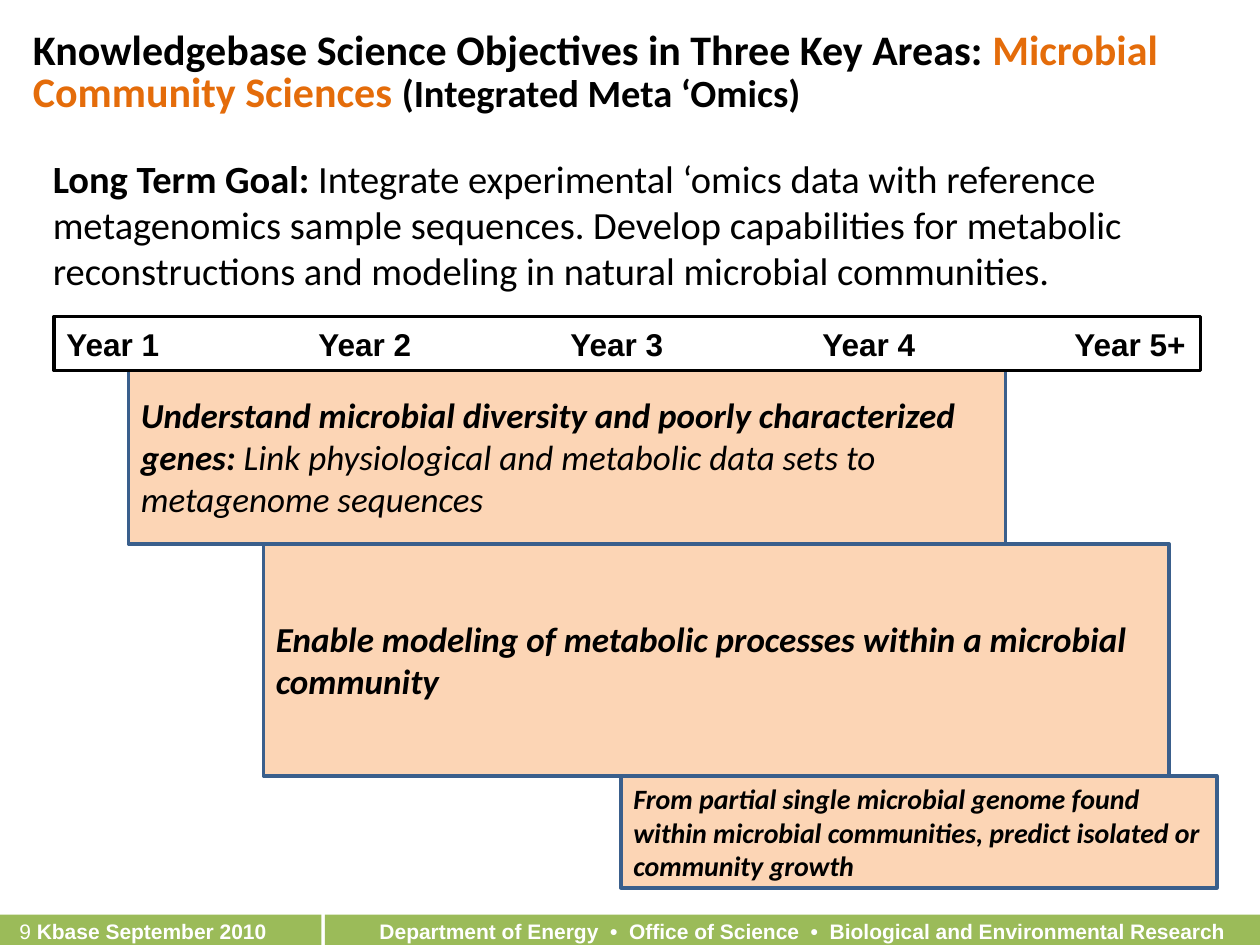
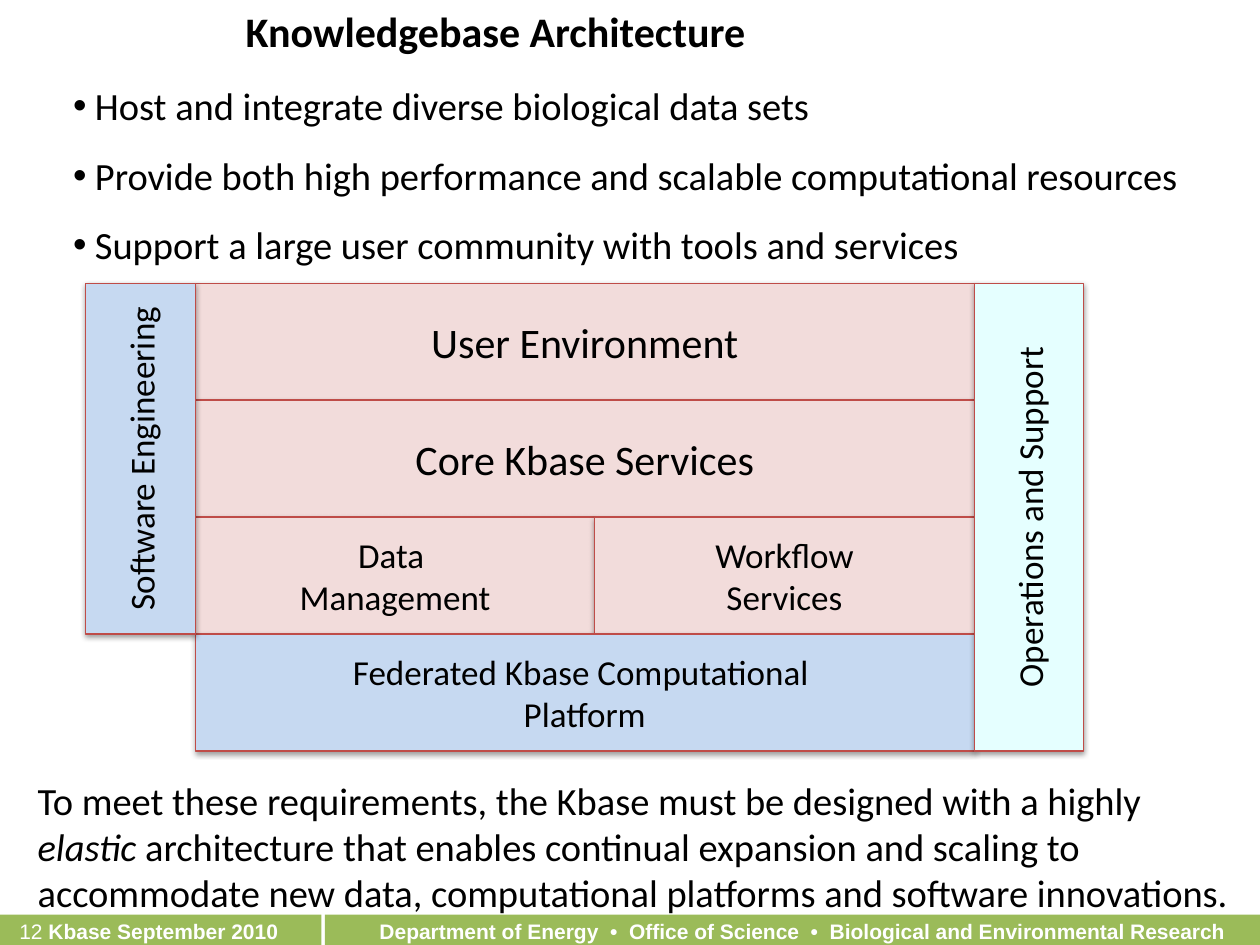
from lxml.etree import SubElement
from pptx import Presentation
from pptx.dml.color import RGBColor
from pptx.enum.shapes import MSO_SHAPE
from pptx.enum.text import MSO_ANCHOR, MSO_AUTO_SIZE, PP_ALIGN
from pptx.oxml.ns import qn
from pptx.util import Cm, Pt

BLACK = RGBColor(0x00, 0x00, 0x00)
WHITE = RGBColor(0xFF, 0xFF, 0xFF)
GREEN = RGBColor(0x9B, 0xBB, 0x59)
ORANGE = RGBColor(0xE4, 0x6C, 0x0A)
PEACH = RGBColor(0xFC, 0xD5, 0xB5)
NAVY = RGBColor(0x3A, 0x5F, 0x8C)
ROSE = RGBColor(0xF2, 0xDC, 0xDB)
RED = RGBColor(0xBF, 0x4C, 0x48)
BLUE = RGBColor(0xC6, 0xD9, 0xF1)
AQUA = RGBColor(0xE5, 0xFF, 0xFF)

BAND = (0, 18.44, 25.4, 0.61)


def place(shape, box):
    shape.left, shape.top, shape.width, shape.height = map(Cm, box)


def write(shape, rows, size, color=BLACK, name="Calibri", bold=None,
          italic=None, align=PP_ALIGN.LEFT, anchor=MSO_ANCHOR.MIDDLE, space=1.0):
    frame = shape.text_frame
    frame.word_wrap = True
    frame.auto_size = MSO_AUTO_SIZE.NONE
    frame.vertical_anchor = anchor
    for i, row in enumerate(rows):
        par = frame.add_paragraph() if i else frame.paragraphs[0]
        par.alignment = align
        par.line_spacing = space
        par.space_before = Pt(0)
        font = par.font
        font.name, font.size, font.bold, font.italic = name, Pt(size), bold, italic
        font.color.rgb = color
        for part in [row] if isinstance(row, str) else row:
            text, style = (part, {}) if isinstance(part, str) else part
            run = par.add_run()
            run.text = text
            for key, value in style.items():
                if key == "color":
                    run.font.color.rgb = value
                else:
                    setattr(run.font, key, value)
    return frame


def add_box(slide, box, fill, line=None, width=2):
    shape = slide.shapes.add_shape(MSO_SHAPE.RECTANGLE, *map(Cm, box))
    shape.shadow.inherit = False
    shape.fill.solid()
    shape.fill.fore_color.rgb = fill
    if line is None:
        shape.line.fill.background()
    else:
        shape.line.color.rgb = line
        shape.line.width = Pt(width)
    return shape


def add_text(slide, box, rows, size, **style):
    shape = slide.shapes.add_textbox(*map(Cm, box))
    write(shape, rows, size, anchor=MSO_ANCHOR.TOP, **style)


def add_shade(shape):
    effect = shape._element.spPr.find(qn("a:effectLst"))
    shade = SubElement(effect, qn("a:outerShdw"), blurRad="40000",
                       dist="20000", dir="5400000", rotWithShape="0")
    color = SubElement(shade, qn("a:srgbClr"), val="000000")
    SubElement(color, qn("a:alpha"), val="38000")


def set_list(par, bullet=None, indent=0.0):
    props = par._p.get_or_add_pPr()
    props.set("marL", str(Cm(indent)))
    props.set("indent", str(-Cm(indent)))
    tag = "a:buChar" if bullet else "a:buNone"
    mark = props.makeelement(qn(tag), {"char": bullet} if bullet else {})
    props.find(qn("a:defRPr")).addprevious(mark)


def set_tabs(par, step, count):
    props = par._p.get_or_add_pPr()
    tabs = props.makeelement(qn("a:tabLst"), {})
    for i in range(1, count + 1):
        SubElement(tabs, qn("a:tab"), pos=str(Cm(step * i)), algn="l")
    props.find(qn("a:defRPr")).addprevious(tabs)


def add_footer(slide, box, page):
    left, top, width, height = box
    split, gap = 6.48, 0.07
    add_box(slide, (left + split + gap, top, width - split - gap, height), GREEN)
    add_box(slide, (left, top, split, height), GREEN)
    style = dict(color=WHITE, name="Arial", space=0.9)
    add_text(slide, (left + 6.76, top, 18.21, height),
             ["Department of Energy  •  Office of Science  •  "
              "Biological and Environmental Research"],
             12, bold=True, align=PP_ALIGN.RIGHT, **style)
    add_text(slide, (left + 0.14, top, 6.3, height),
             [[f"{page} ", ("Kbase September 2010", {"bold": True})]], 12, **style)


def add_slide(deck, page, box, title):
    slide = deck.slides.add_slide(deck.slide_layouts[1])
    place(slide.shapes.title, box)
    write(slide.shapes.title, [title], 24, bold=True, space=0.85)
    add_footer(slide, BAND, page)
    return slide


def add_body(slide, box, rows, bullet=None, indent=0.0, space=1.0):
    body = slide.placeholders[1]
    place(body, box)
    frame = write(body, rows, 22, anchor=MSO_ANCHOR.TOP, space=space)
    for par in frame.paragraphs:
        set_list(par, bullet, indent)


def add_years(slide, box):
    bar = add_box(slide, box, WHITE, BLACK)
    years = "\t".join(["Year 1", "Year 2", "Year 3", "Year 4", "Year 5+"])
    frame = write(bar, [years], 18, name="Arial", bold=True)
    set_tabs(frame.paragraphs[0], 5.08, 4)


def add_steps(slide, box):
    left, top = box[:2]
    steps = [
        (0, 17.68, 3.53, 20,
         ["Understand microbial diversity and poorly characterized genes: ",
          ("Link physiological and metabolic data sets to metagenome sequences",
           {"bold": False})]),
        (2.72, 18.26, 4.67, 20,
         "Enable modeling of metabolic processes within a microbial community"),
        (9.93, 12.01, 2.26, 16,
         "From partial single microbial genome found within microbial "
         "communities, predict isolated or community growth"),
    ]
    for shift, width, height, size, row in steps:
        step = add_box(slide, (left + shift, top, width, height), PEACH, NAVY)
        write(step, [row], size, bold=True, italic=True)
        top += height


def add_block(slide, box, rows, size, fill):
    block = add_box(slide, box, fill, RED, 0.75)
    add_shade(block)
    write(block, rows, size, align=PP_ALIGN.CENTER)
    return block


def add_side(slide, box, label, fill):
    left, top, width, height = box
    shift = (height - width) / 2
    turned = (left - shift, top + shift, height, width)
    add_block(slide, turned, [label], 20, fill).rotation = 270


def add_stack(slide, box):
    left, top, width, height = box
    side, row = 2.21, height / 4
    core, data = width - 2 * side, 8.05
    blocks = [
        (0, 0, core, ["User Environment"], 24, ROSE),
        (0, 1, core, ["Core Kbase Services"], 24, ROSE),
        (0, 2, data, ["Data ", "Management"], 20, ROSE),
        (data, 2, core - data, ["Workflow", "Services"], 20, ROSE),
        (0, 3, core, ["Federated Kbase Computational ", "Platform"], 20, BLUE),
    ]
    for shift, line, span, rows, size, fill in blocks:
        spot = (left + side + shift, top + line * row, span, row)
        add_block(slide, spot, rows, size, fill)
    add_side(slide, (left + side + core, top, side, height),
             "Operations and Support", AQUA)
    add_side(slide, (left, top, side, 3 * row), "Software Engineering", BLUE)


def build_goals(deck):
    slide = add_slide(deck, 9, (0.41, 0.48, 24.1, 2.01), [
        "Knowledgebase Science Objectives in Three Key Areas: ",
        ("Microbial Community Sciences ", {"color": ORANGE}),
        ("(Integrated Meta ‘Omics)", {"size": Pt(22)}),
    ])
    add_body(slide, (0.81, 3, 23.77, 3.1), [[
        ("Long Term Goal: ", {"bold": True}),
        "Integrate experimental ‘omics data with reference metagenomics sample "
        "sequences. Develop capabilities for metabolic reconstructions and "
        "modeling in natural microbial communities.",
    ]])
    add_steps(slide, (2.59, 7.44, 21.94, 10.46))
    add_years(slide, (1.09, 6.38, 23.11, 1.09))


def build_design(deck):
    slide = add_slide(deck, 12, (4.7, 0.13, 15.72, 1.12),
                      "Knowledgebase Architecture")
    add_body(slide, (1.22, 1.07, 22.94, 4.6), [
        "Host and integrate diverse biological data sets",
        "Provide both high performance and scalable computational resources",
        "Support a large user community with tools and services",
    ], "•", 0.44, 1.5)
    add_text(slide, (0.51, 15.54, 24.89, 3.07), [[
        "To meet these requirements, the Kbase must be designed with a highly ",
        ("elastic", {"italic": True}),
        " architecture that enables continual expansion and scaling to "
        "accommodate new data, computational platforms and software innovations.",
    ]], 22)
    add_stack(slide, (1.73, 5.71, 20.12, 9.43))


def main():
    deck = Presentation()
    deck.slide_width, deck.slide_height = Cm(25.4), Cm(19.05)
    build_goals(deck)
    build_design(deck)
    deck.save("out.pptx")


if __name__ == "__main__":
    main()
